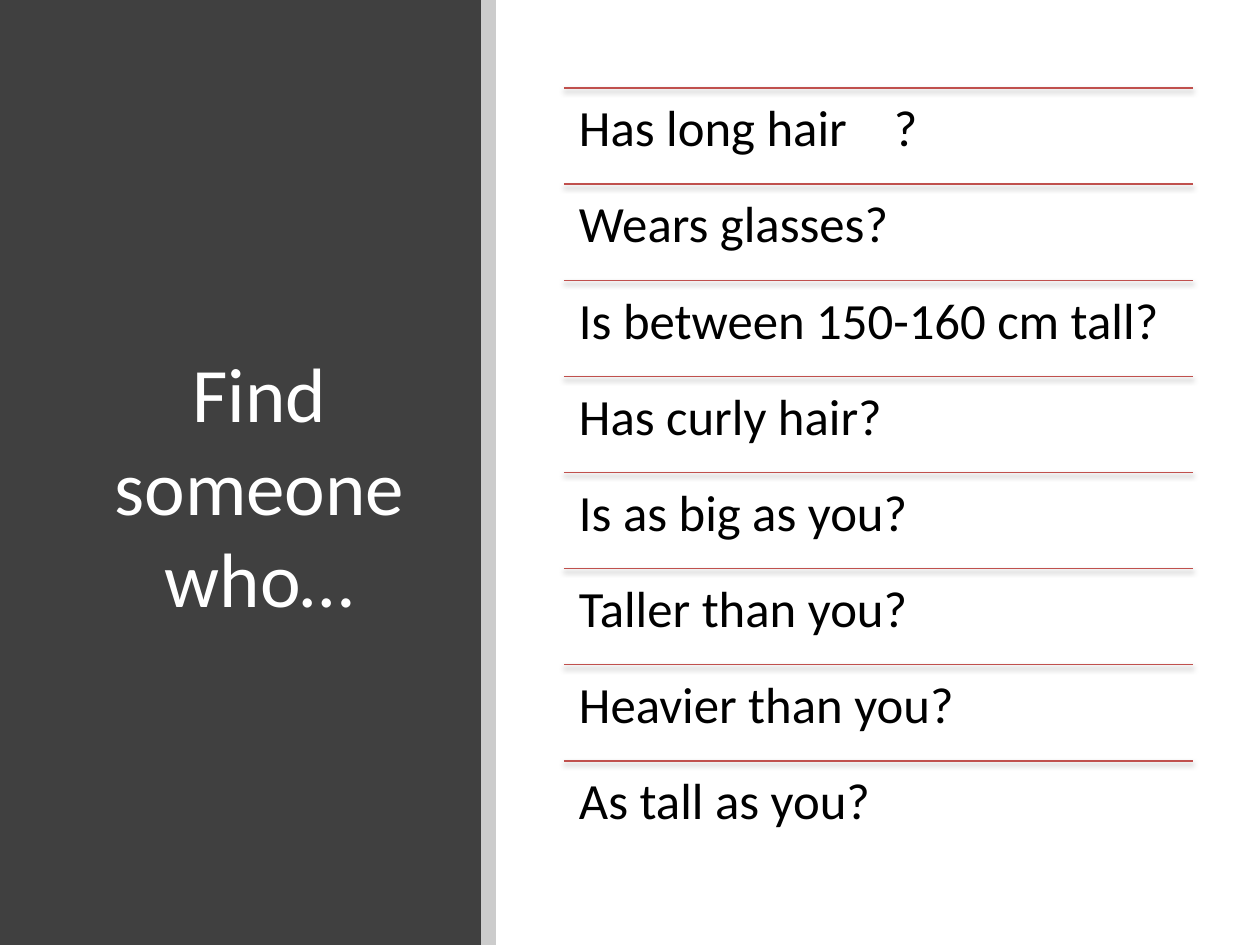
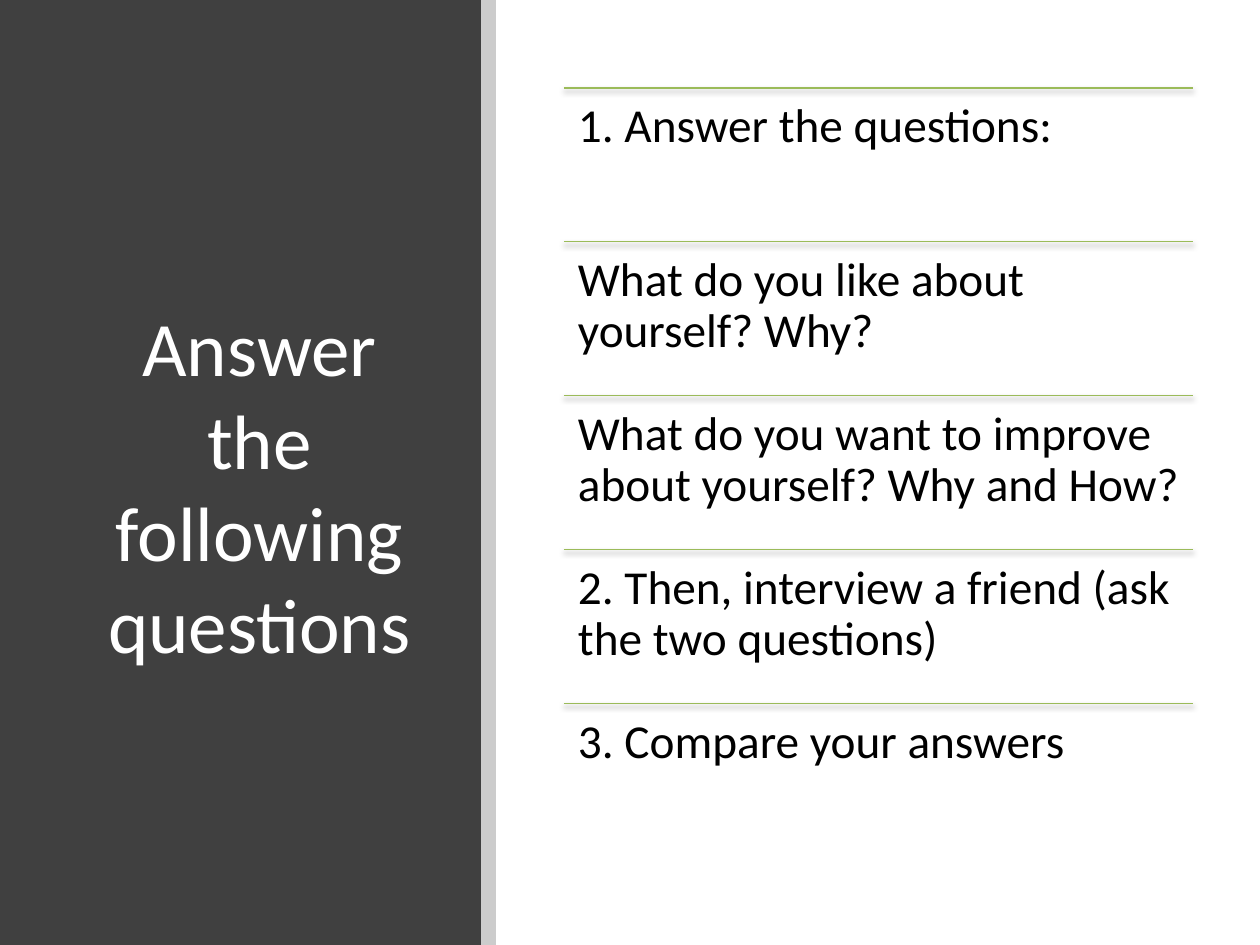
from lxml import etree
from pptx import Presentation
from pptx.dml.color import RGBColor
from pptx.enum.shapes import MSO_CONNECTOR, MSO_SHAPE
from pptx.enum.text import MSO_ANCHOR, PP_ALIGN
from pptx.oxml.ns import qn
from pptx.util import Emu, Pt

RECT = MSO_SHAPE.RECTANGLE
STRAIGHT = MSO_CONNECTOR.STRAIGHT
TOP, MIDDLE = MSO_ANCHOR.TOP, MSO_ANCHOR.MIDDLE
LEFT, CENTER = PP_ALIGN.LEFT, PP_ALIGN.CENTER

EMU_PER_PX = 914400 / 126
WIDTH, HEIGHT = 1260, 945
FONT = "Calibri"
BLACK, WHITE, PANEL = "000000", "FFFFFF", "404040"
RED, GREEN = "C0504D", "9BBB59"

PANEL_BOX = (0, 0, 481, HEIGHT)
STRIP_WIDTH = 15
LIST_BOX = (564, 88, 629, 769)

SLIDES = [
    {
        "title": "Find someone who…",
        "color": RED, "size": 29, "inset": 15,
        "rows": [
            "Has long hair\t?",
            "Wears glasses?",
            "Is between 150-160 cm tall?",
            "Has curly hair?",
            "Is as big as you?",
            "Taller than you?",
            "Heavier than you?",
            "As tall as you?",
        ],
    },
    {
        "title": "Answer the following questions",
        "color": GREEN, "size": 27, "inset": 14,
        "rows": [
            "1. Answer the questions:",
            "What do you like about yourself? Why?",
            "What do you want to improve about yourself? Why and How?",
            "2. Then, interview a friend (ask the two questions)",
            "3. Compare your answers",
        ],
    },
]


def px(n):
    return Emu(round(n * EMU_PER_PX))


def rgb(color):
    return RGBColor.from_string(color)


def add_alpha(color_element, percent):
    etree.SubElement(color_element, qn("a:alpha"), val=str(percent * 1000))


def add_text(shapes, text, box, size, color=BLACK, align=LEFT, anchor=TOP,
             inset=(13, 6), spacing=None):
    sp = shapes.add_textbox(*map(px, box))
    tf = sp.text_frame
    tf.word_wrap = True
    tf.vertical_anchor = anchor
    tf.margin_left = tf.margin_right = px(inset[0])
    tf.margin_top = tf.margin_bottom = px(inset[1])
    p = tf.paragraphs[0]
    p.alignment = align
    p.line_spacing = spacing
    r = p.add_run()
    r.text = text
    r.font.name = FONT
    r.font.size = Pt(size)
    r.font.color.rgb = rgb(color)


def add_rect(shapes, box, color, opacity=100):
    sp = shapes.add_shape(RECT, *map(px, box))
    sp.shadow.inherit = False
    sp.line.fill.background()
    sp.fill.solid()
    sp.fill.fore_color.rgb = rgb(color)
    if opacity < 100:
        add_alpha(sp.fill._xPr.find(".//" + qn("a:srgbClr")), opacity)


def add_rule(shapes, x, y, w, color):
    line = shapes.add_connector(STRAIGHT, px(x), px(y), px(x + w), px(y))
    line.line.color.rgb = rgb(color)
    line.line.width = Pt(0.75)
    effects = etree.SubElement(line._element.spPr, qn("a:effectLst"))
    shadow = etree.SubElement(effects, qn("a:outerShdw"), blurRad="40000",
                              dist="23000", dir="5400000", rotWithShape="0")
    add_alpha(etree.SubElement(shadow, qn("a:srgbClr"), val=BLACK), 35)


def add_title_panel(shapes, box, title):
    x, y, w, h = box
    add_rect(shapes, box, PANEL)
    add_text(shapes, title, (x + 87, y + 112, w - 136, h - 200), 44,
             color=WHITE, align=CENTER, anchor=MIDDLE)
    add_rect(shapes, (x + w, y, STRIP_WIDTH, h), BLACK, opacity=20)


def add_ruled_list(shapes, box, rows, color, size, inset):
    x, y, w, h = box
    row_height = h / len(rows)
    group = shapes.add_group_shape().shapes
    for i, text in enumerate(rows):
        top = y + i * row_height
        add_rule(group, x, top, w, color)
        add_text(group, text, (x, top, w, row_height), size,
                 inset=(inset, inset), spacing=0.9)


def main():
    prs = Presentation()
    prs.slide_width, prs.slide_height = px(WIDTH), px(HEIGHT)
    for content in SLIDES:
        s = prs.slides.add_slide(prs.slide_layouts[6])
        add_title_panel(s.shapes, PANEL_BOX, content["title"])
        add_ruled_list(s.shapes, LIST_BOX, content["rows"], content["color"],
                       content["size"], content["inset"])
    prs.save("out.pptx")


if __name__ == "__main__":
    main()
